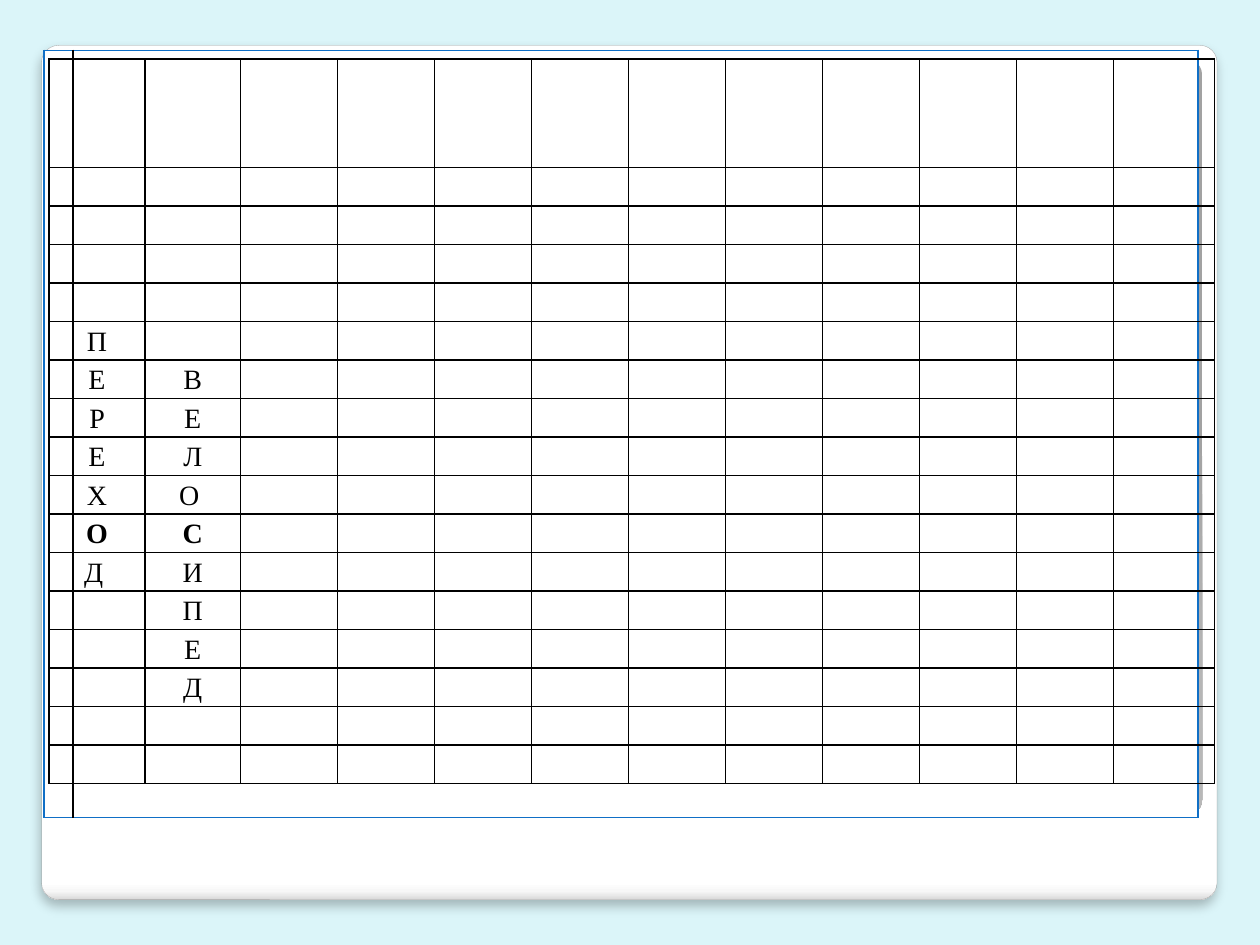
from dataclasses import dataclass

from lxml.etree import SubElement
from pptx import Presentation
from pptx.dml.color import RGBColor as Rgb
from pptx.enum.shapes import MSO_SHAPE as Shape
from pptx.enum.text import PP_ALIGN as Align
from pptx.oxml import parse_xml
from pptx.oxml.ns import nsdecls, qn
from pptx.util import Inches, Pt

HUES = {"back": "DBF5F9", "white": "FFFFFF", "black": "000000",
        "blue": "0F6FC6", "edge": "A4A4A4"}
LINEAR = '<a:lin ang="5400000" scaled="0"/>'
CIRCLE = ('<a:path path="circle"><a:fillToRect l="50000" t="175000" '
          'r="50000" b="-75000"/></a:path>')


@dataclass
class Panel:
    box: tuple
    stops: list
    shade: str
    edged: bool


@dataclass
class Word:
    text: str
    col: int
    row: int
    bold: int
    loose: int  # letter followed by a space


PANELS = [
    Panel((0.33, 0.36, 9.33, 6.78),
          [(0, "FFFFFF"), (98, "FFFFFF"), (99, "F7F7F7"), (100, "DADADA")],
          LINEAR, True),
    Panel((0.46, 0.47, 9.08, 6),
          [(0, "FFFFFF"), (55, "E1E1E1"), (100, "A2A2A2")], CIRCLE, False),
]
WORDS = [Word("ПЕРЕХОД", 0, 5, 5, 6), Word("ВЕЛОСИПЕД", 1, 6, 4, 3)]


def hue(name: str) -> Rgb:
    return Rgb.from_string(HUES[name])


def draw_panel(slide, panel: Panel) -> None:
    shape = slide.shapes.add_shape(Shape.ROUNDED_RECTANGLE,
                                   *map(Inches, panel.box))
    shape.adjustments[0] = 0.02
    shape.shadow.inherit = False
    shape.fill.gradient()
    props = shape._element.spPr
    stops = "".join(f'<a:gs pos="{pos * 1000}"><a:srgbClr val="{tone}"/></a:gs>'
                    for pos, tone in panel.stops)
    props.replace(props.find(qn("a:gradFill")), parse_xml(
        f'<a:gradFill {nsdecls("a")} rotWithShape="1">'
        f'<a:gsLst>{stops}</a:gsLst>{panel.shade}</a:gradFill>'))
    if not panel.edged:
        shape.line.fill.background()
        return
    shape.line.color.rgb = hue("edge")
    shape.line.width = Pt(0.16)
    props.find(qn("a:effectLst")).append(parse_xml(
        f'<a:outerShdw {nsdecls("a")} blurRad="{Pt(6)}" dist="{Pt(4)}" '
        f'dir="5400000" algn="t" rotWithShape="0"><a:srgbClr '
        f'val="{HUES["black"]}"><a:alpha val="25000"/></a:srgbClr></a:outerShdw>'))


def set_edges(cell, left: str, right: str, top: str, bottom: str) -> None:
    props = cell._tc.get_or_add_tcPr()
    for side, name in zip("LRTB", (left, right, top, bottom)):
        line = SubElement(props, qn(f"a:ln{side}"), w=str(Pt(1)))
        fill = SubElement(line, qn("a:solidFill"))
        SubElement(fill, qn("a:srgbClr"), val=HUES[name])


def add_grid(slide, left: float, top: float, cols: list, rows: list):
    table = slide.shapes.add_table(
        len(rows), len(cols), Inches(left), Inches(top),
        Inches(sum(cols)), Inches(sum(rows))).table
    table.first_row = table.horz_banding = False
    for col, width in zip(table.columns, cols):
        col.width = Inches(width)
    for row, height in zip(table.rows, rows):
        row.height = Inches(height)
    for cell in table.iter_cells():
        cell.margin_left = cell.margin_right = Inches(0.07)
        cell.margin_top = cell.margin_bottom = 0
    return table


def write_word(table, word: Word) -> None:
    for step, char in enumerate(word.text):
        para = table.cell(word.row + step, word.col).text_frame.paragraphs[0]
        para.text = char + " " if step == word.loose else char
        para.alignment = Align.CENTER
        para.line_spacing = 1.15
        font = para.runs[0].font
        font.name = "Times New Roman"
        font.size = Pt(16)
        font.bold = step == word.bold
        font.color.rgb = hue("black")


def main() -> None:
    deck = Presentation()
    deck.slide_width, deck.slide_height = Inches(10), Inches(7.5)
    slide = deck.slides.add_slide(deck.slide_layouts[6])
    slide.background.fill.solid()
    slide.background.fill.fore_color.rgb = hue("back")

    # Backing panels
    for panel in PANELS:
        draw_panel(slide, panel)

    # White frame with a narrow left column
    frame = add_grid(slide, 0.35, 0.4, [0.23, 8.93], [6.09])
    set_edges(frame.cell(0, 0), "blue", "black", "blue", "blue")
    set_edges(frame.cell(0, 1), "black", "blue", "blue", "blue")
    for cell in frame.iter_cells():
        cell.fill.solid()
        cell.fill.fore_color.rgb = hue("white")

    # Crossword grid
    grid = add_grid(slide, 0.39, 0.47, [0.76] * 2 + [0.77] * 9 + [0.8],
                    [0.86] + [0.3] * 16)
    for cell in grid.iter_cells():
        set_edges(cell, *["black"] * 4)
        cell.fill.background()
    for word in WORDS:
        write_word(grid, word)

    deck.save("out.pptx")


if __name__ == "__main__":
    main()
